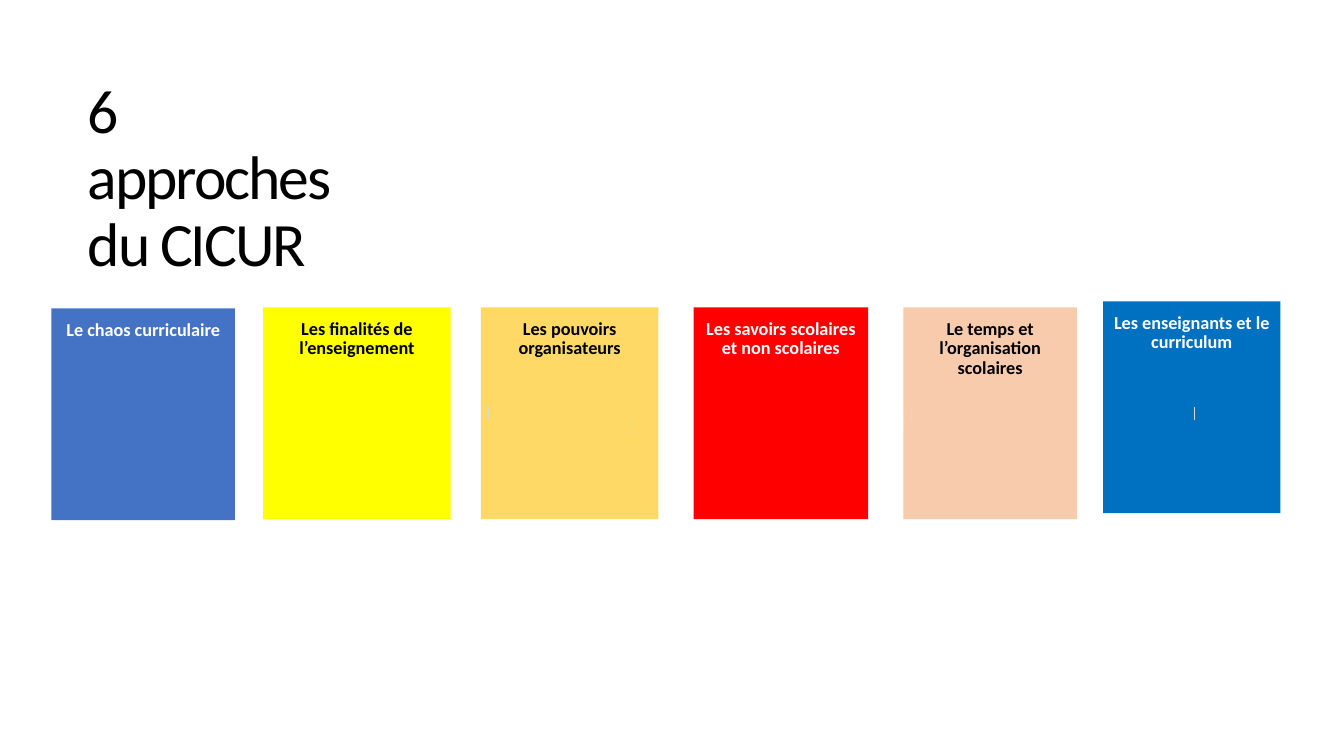
from lxml import etree
from pptx import Presentation
from pptx import util as u
from pptx.dml.color import RGBColor
from pptx.enum import shapes, text
from pptx.oxml.ns import qn

COLORS = {
    "black": "000000",
    "white": "FFFFFF",
    "blue": "4472C4",
    "yellow": "FFFF00",
    "gold": "FFD966",
    "red": "FF0000",
    "peach": "F8CBAD",
    "ocean": "0070C0",
    "grey": "D9D9D9",
}
CARD_TOP = 3.05
CARD_HEIGHT = 2.1
TICK_HEIGHT = 0.13
APPROACHES = [
    (0.51, 3.06, 1.82, "blue", "white", "Le chaos curriculaire"),
    (2.61, CARD_TOP, 1.86, "yellow", "black", "Les finalités de l’enseignement"),
    (4.77, CARD_TOP, 1.76, "gold", "black", "Les pouvoirs organisateurs"),
    (6.88, CARD_TOP, 1.73, "red", "white", "Les savoirs scolaires et non scolaires"),
    (8.96, CARD_TOP, 1.72, "peach", "black", "Le temps et l’organisation scolaires"),
    (10.94, 2.99, 1.76, "ocean", "white", "Les enseignants et le curriculum"),
]
TICKS = [(4.84, 4.04), (6.24, 4.17), (9.04, 4.04), (11.84, 4.04)]


def color(name):
    return RGBColor.from_string(COLORS[name])


def write_text(shape, content, *, size, ink, font="Calibri", bold=False,
               align=text.PP_ALIGN.LEFT, anchor=text.MSO_ANCHOR.TOP,
               insets=(0, 0, 0, 0), space_after=0, tracking=None):
    frame = shape.text_frame
    frame.word_wrap = True
    frame.vertical_anchor = anchor
    (frame.margin_left, frame.margin_top,
     frame.margin_right, frame.margin_bottom) = map(u.Inches, insets)
    paragraph = frame.paragraphs[0]
    paragraph.alignment = align
    paragraph.line_spacing = 0.9
    paragraph.space_after = u.Pt(space_after)
    run = paragraph.add_run()
    run.text = content
    run.font.name = font
    run.font.size = u.Pt(size)
    run.font.bold = bold
    run.font.color.rgb = color(ink)
    if tracking is not None:
        run._r.get_or_add_rPr().set("spc", str(round(tracking * 100)))


class SlideBuilder:
    def __init__(self, slide, font="Calibri"):
        self.slide = slide
        self.font = font

    def title(self, left, top, width, height, content):
        box = self.slide.shapes.add_textbox(*map(u.Inches, (left, top, width, height)))
        write_text(box, content, size=44, ink="black", font=self.font,
                   anchor=text.MSO_ANCHOR.MIDDLE, tracking=-1.5)

    def card(self, left, top, width, fill, ink, content):
        card = self.slide.shapes.add_shape(
            shapes.MSO_SHAPE.RECTANGLE,
            *map(u.Inches, (left, top, width, CARD_HEIGHT)))
        card.shadow.inherit = False
        card.fill.solid()
        card.fill.fore_color.rgb = color(fill)
        card.line.fill.background()
        write_text(card, content, size=13, ink=ink, font=self.font, bold=True,
                   align=text.PP_ALIGN.CENTER, insets=(0.08, 0.12, 0.08, 0),
                   space_after=4.5)

    def tick(self, left, top):
        tick = self.slide.shapes.add_connector(
            shapes.MSO_CONNECTOR.STRAIGHT,
            *map(u.Inches, (left, top, left, top + TICK_HEIGHT)))
        tick.line.color.rgb = color("grey")
        tick.line.width = u.Pt(0.25)
        etree.SubElement(tick._element.spPr, qn("a:effectLst"))


def main():
    presentation = Presentation()
    presentation.slide_width = u.Inches(13.33)
    presentation.slide_height = u.Inches(7.5)
    builder = SlideBuilder(presentation.slides.add_slide(presentation.slide_layouts[6]))
    builder.title(0.87, 0.51, 2.71, 2.55, "6 approches du CICUR")
    for approach in APPROACHES:
        builder.card(*approach)
    for position in TICKS:
        builder.tick(*position)
    presentation.save("out.pptx")


if __name__ == "__main__":
    main()
